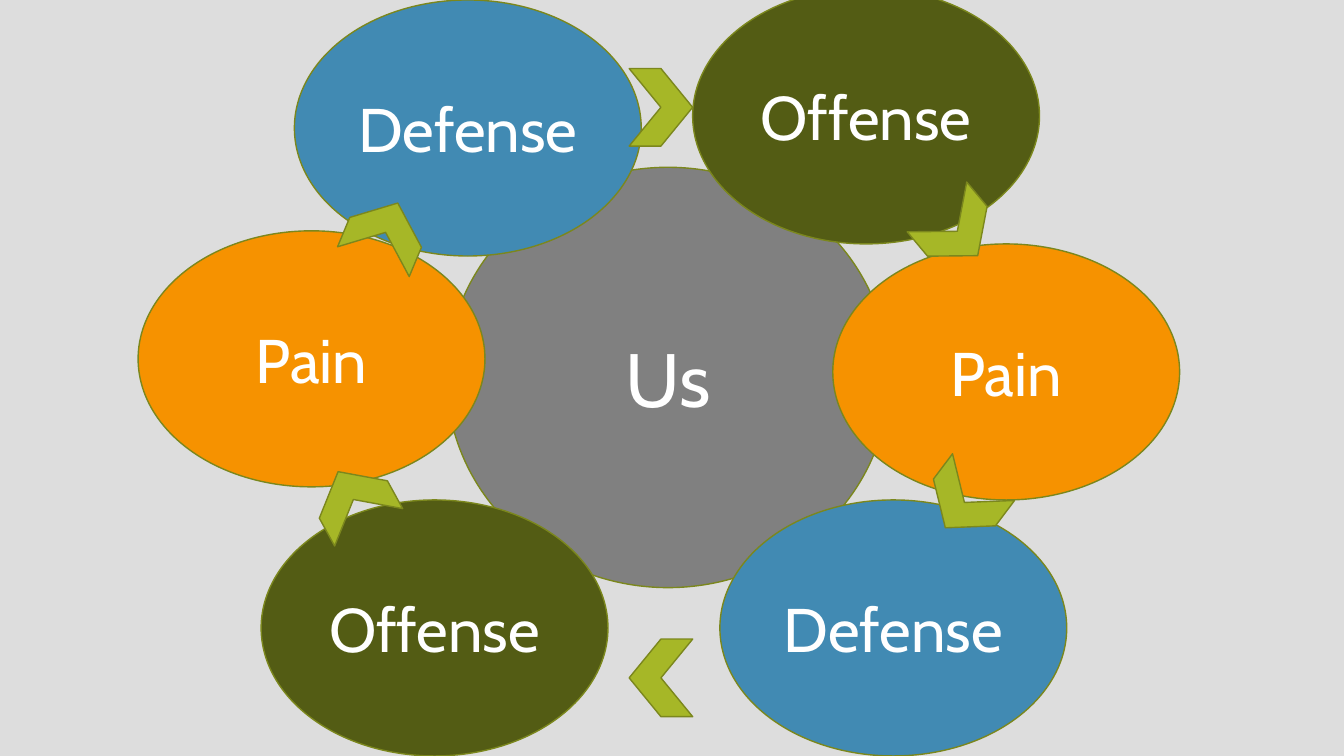
from pptx import Presentation
from pptx.dml.color import RGBColor
from pptx.enum.shapes import MSO_SHAPE
from pptx.enum.text import MSO_ANCHOR, PP_ALIGN
from pptx.util import Inches, Pt

ELLIPSE = MSO_SHAPE.OVAL
CHEVRON = MSO_SHAPE.CHEVRON
MIDDLE = MSO_ANCHOR.MIDDLE
CENTER = PP_ALIGN.CENTER
BLANK_LAYOUT = 6

FONT = "Cabin"
COLORS = {
    "background": "DDDDDD",
    "outline": "7B871D",
    "text": "FFFFFF",
    "arrow": "A6B727",
    "Us": "808080",
    "Pain": "F69200",
    "Defense": "418AB3",
    "Offense": "535C14",
}

STAGE_SIZE = (3.44, 2.54)
ARROW_SIZE = (0.63, 0.77)

# Label, left, top; from back to front
STAGES = [
    ("Pain", 8.26, 2.42),
    ("Pain", 1.37, 2.29),
    ("Defense", 7.14, 4.96),
    ("Offense", 2.59, 4.96),
    ("Defense", 2.92, 0),
    ("Offense", 6.87, -0.12),
]

# Left, top, rotation in degrees
ARROWS = [
    (6.24, 6.34, 180),
    (9.25, 4.6, 127),
    (9.18, 1.91, 50.1),
    (6.24, 0.68, 0),
    (3.51, 1.92, 292.6),
    (3.19, 4.57, 241.2),
]


def color(name):
    return RGBColor.from_string(COLORS[name])


def add_outlined_shape(page, kind, left, top, size, fill):
    shape = page.shapes.add_shape(
        kind, Inches(left), Inches(top), Inches(size[0]), Inches(size[1]))
    shape.shadow.inherit = False
    shape.fill.solid()
    shape.fill.fore_color.rgb = color(fill)
    shape.line.color.rgb = color("outline")
    shape.line.width = Pt(1)
    return shape


def add_circle(page, label, left, top, size, points):
    circle = add_outlined_shape(page, ELLIPSE, left, top, size, label)
    frame = circle.text_frame
    frame.text = label
    frame.word_wrap = True
    frame.vertical_anchor = MIDDLE
    para = frame.paragraphs[0]
    para.alignment = CENTER
    font = para.runs[0].font
    font.name = FONT
    font.size = Pt(points)
    font.color.rgb = color("text")


def add_arrow(page, left, top, rotation):
    arrow = add_outlined_shape(page, CHEVRON, left, top, ARROW_SIZE, "arrow")
    arrow.rotation = rotation


def main():
    deck = Presentation()
    deck.slide_width = Inches(13.33)
    deck.slide_height = Inches(7.5)
    page = deck.slides.add_slide(deck.slide_layouts[BLANK_LAYOUT])
    page.background.fill.solid()
    page.background.fill.fore_color.rgb = color("background")

    # Centre of the cycle
    add_circle(page, "Us", 4.43, 1.66, (4.39, 4.17), 54)

    # Stages around the centre
    for label, left, top in STAGES:
        add_circle(page, label, left, top, STAGE_SIZE, 44)

    # Clockwise arrows between the stages
    for left, top, rotation in ARROWS:
        add_arrow(page, left, top, rotation)

    deck.save("out.pptx")


if __name__ == "__main__":
    main()
